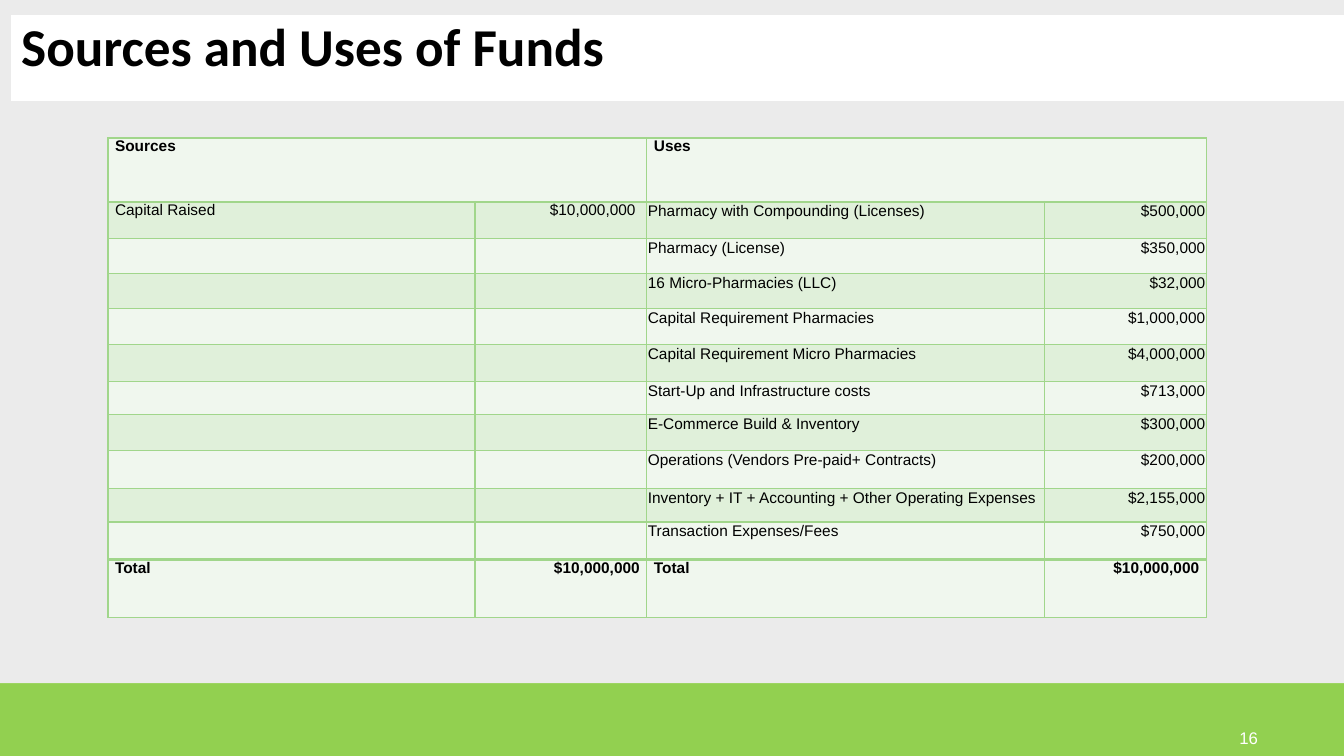
from lxml import etree
from pptx import Presentation
from pptx import util as u
from pptx.dml import color
from pptx.enum import shapes, text
from pptx.oxml import ns

COLUMN_WIDTHS = [262.1, 122.8, 284, 115.6]
ROW_HEIGHTS = [45.5, 26.3, 25, 25, 26, 26, 23.8, 25.8, 27, 24, 26.8, 41.2]
BORDER = "A1D68B"
BANDS = ["F0F7EE", "E0F0DA"]
USES = [
    ("Pharmacy with Compounding (Licenses)", "$500,000"),
    ("Pharmacy (License)", "$350,000"),
    ("16 Micro-Pharmacies (LLC)", "$32,000"),
    ("Capital Requirement Pharmacies", "$1,000,000"),
    ("Capital Requirement Micro Pharmacies", "$4,000,000"),
    ("Start-Up and Infrastructure costs", "$713,000"),
    ("E-Commerce Build & Inventory", "$300,000"),
    ("Operations (Vendors Pre-paid+ Contracts)", "$200,000"),
    ("Inventory + IT + Accounting + Other Operating Expenses", "$2,155,000"),
    ("Transaction Expenses/Fees", "$750,000"),
]


def paint(fill, hex_color):
    fill.solid()
    fill.fore_color.rgb = color.RGBColor.from_string(hex_color)


def place(shape, left, top, width, height):
    shape.left, shape.top = u.Pt(left), u.Pt(top)
    shape.width, shape.height = u.Pt(width), u.Pt(height)


def write(paragraph, words, size, name="Arial", hex_color="000000", bold=False, align="LEFT"):
    paragraph.text = words
    paragraph.alignment = getattr(text.PP_ALIGN, align)
    font = paragraph.font
    font.size, font.name, font.bold = u.Pt(size), name, bold
    paint(font.fill, hex_color)


def add_panel(slide, top, height, hex_color, opacity=100):
    panel = slide.shapes.add_shape(
        shapes.MSO_SHAPE.RECTANGLE, 0, u.Pt(top), u.Pt(960), u.Pt(height))
    panel.shadow.inherit = False
    paint(panel.fill, hex_color)
    panel.line.fill.background()
    if opacity < 100:
        tint = panel.element.spPr.find(".//" + ns.qn("a:srgbClr"))
        etree.SubElement(tint, ns.qn("a:alpha"), val=str(opacity * 1000))


def add_title(slide, words):
    title = slide.shapes.title
    title.element.getparent().append(title.element)
    place(title, 7.9, 10.8, 960, 61.2)
    paint(title.fill, "FFFFFF")
    frame = title.text_frame
    frame.vertical_anchor = text.MSO_ANCHOR.TOP
    frame.auto_size = text.MSO_AUTO_SIZE.NONE
    write(frame.paragraphs[0], words, 38, "Calibri", bold=True)
    frame.paragraphs[0].line_spacing = 0.9


def add_page_number(slide, number):
    box = slide.shapes.add_textbox(u.Pt(835.9), u.Pt(512.6), u.Pt(69.8), u.Pt(28.8))
    frame = box.text_frame
    frame.word_wrap = True
    frame.vertical_anchor = text.MSO_ANCHOR.MIDDLE
    write(frame.paragraphs[0], number, 12, hex_color="FFFFFF", align="RIGHT")


def add_borders(cell, top, bottom):
    properties = cell._tc.get_or_add_tcPr()
    for side, width in (("L", 1), ("R", 1), ("T", top), ("B", bottom)):
        line = etree.SubElement(properties, ns.qn("a:ln" + side), w=str(u.Pt(width)))
        fill = etree.SubElement(line, ns.qn("a:solidFill"))
        etree.SubElement(fill, ns.qn("a:srgbClr"), val=BORDER)


def format_cell(cell, words, row, column):
    last = len(ROW_HEIGHTS) - 1
    outer = row in (0, last)
    side = 5 if outer or column < 2 else 0.7
    cell.margin_left = cell.margin_right = u.Pt(side)
    cell.margin_top = u.Pt(0 if side == 5 else 0.7)
    cell.margin_bottom = 0
    if (row, column) == (1, 1):
        cell.margin_right = u.Pt(8)
    widths = {0: (1, 1.5), 1: (1.5, 1), last - 1: (1, 2), last: (2, 1)}
    add_borders(cell, *widths.get(row, (1, 1)))
    paint(cell.fill, BANDS[0 if outer else row % 2])
    align = "RIGHT" if column % 2 else "LEFT"
    write(cell.text_frame.paragraphs[0], words, 11, bold=outer, align=align)


def add_funds_table(slide):
    sources = [("Capital Raised", "$10,000,000")] + [("", "")] * (len(USES) - 1)
    rows = [("Sources", "", "Uses", "")]
    rows += [source + use for source, use in zip(sources, USES)]
    rows.append(("Total", "$10,000,000") * 2)
    frame = slide.shapes.add_table(
        len(rows), len(COLUMN_WIDTHS), u.Pt(77.2), u.Pt(98.6),
        u.Pt(sum(COLUMN_WIDTHS)), u.Pt(sum(ROW_HEIGHTS)))
    table = frame.table
    for column, width in zip(table.columns, COLUMN_WIDTHS):
        column.width = u.Pt(width)
    for row, height in zip(table.rows, ROW_HEIGHTS):
        row.height = u.Pt(height)
    for row, values in enumerate(rows):
        for column, words in enumerate(values):
            format_cell(table.cell(row, column), words, row, column)
    for column in (0, 2):
        table.cell(0, column).merge(table.cell(0, column + 1))


def main():
    presentation = Presentation()
    presentation.slide_width, presentation.slide_height = u.Pt(960), u.Pt(540)
    slide = presentation.slides.add_slide(presentation.slide_layouts[5])
    paint(slide.background.fill, "000000")
    add_panel(slide, 488, 54, "92D050")
    add_page_number(slide, "16")
    add_panel(slide, 0, 488, "FFFFFF", opacity=92)
    add_title(slide, "Sources and Uses of Funds")
    add_funds_table(slide)
    presentation.save("out.pptx")


if __name__ == "__main__":
    main()
